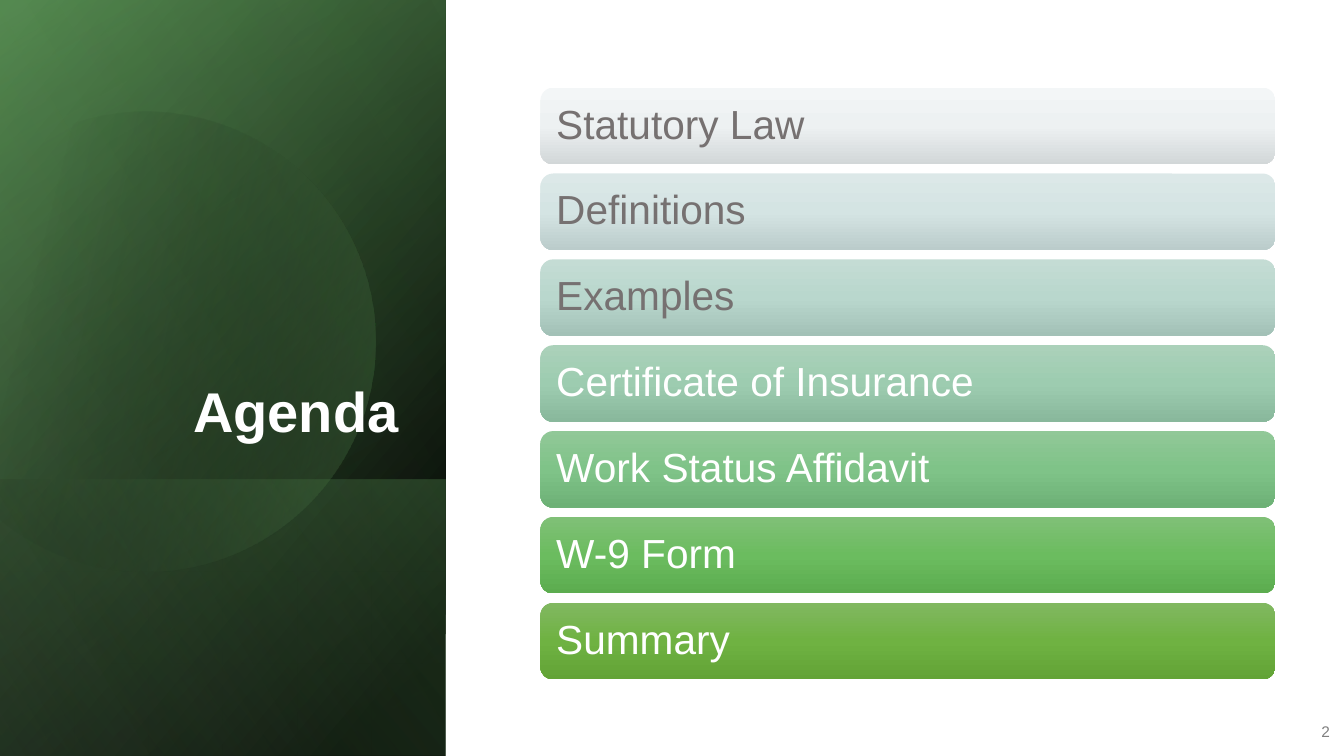
from dataclasses import dataclass
from math import cos, radians, sin

from lxml.etree import SubElement
from pptx import Presentation
from pptx.dml.color import RGBColor
from pptx.enum.shapes import MSO_SHAPE
from pptx.enum.text import MSO_ANCHOR, PP_ALIGN
from pptx.oxml.ns import qn
from pptx.util import Inches, Pt


@dataclass(frozen=True)
class Theme:
    """Colours and type sizes of the slide."""
    font: str = "Arial"
    white: str = "FFFFFF"
    grey: str = "767171"
    number_grey: str = "808080"
    black: str = "000000"
    green: str = "62A25D"
    deep_green: str = "4A7A46"
    pale_green: str = "A1C79E"
    title_size: int = 40
    item_size: int = 29
    number_size: int = 11


THEME = Theme()

AGENDA = [
    ("Statutory Law", THEME.grey, ("F3F6F7", "EDF1F2", "D2D7D8")),
    ("Definitions", THEME.grey, ("DCE8E8", "D4E4E3", "BBCCCB")),
    ("Examples", THEME.grey, ("C4DCD4", "B9D7CD", "A3C1B7")),
    ("Certificate of Insurance", THEME.white, ("ABD1BA", "9DCCB0", "89B89C")),
    ("Work Status Affidavit", THEME.white, ("91C898", "7FC388", "6DB176")),
    ("W-9 Form", THEME.white, ("80C077", "6BBC5F", "5CAC4F")),
    ("Summary", THEME.white, ("81B861", "6FB242", "62A336")),
]


def set_values(target, values):
    """Set each attribute of the target from a dict."""
    for name, value in values.items():
        setattr(target, name, value)


def paint_gradient(shape, stops, angle):
    """Fill a shape with (position, colour, opacity) stops and no outline."""
    shape.shadow.inherit = False
    shape.line.fill.background()
    shape.fill.gradient()
    gradient = shape.element.spPr.find(qn("a:gradFill"))
    stop_list = gradient.find(qn("a:gsLst"))
    for stop in list(stop_list):
        stop_list.remove(stop)
    for position, colour, opacity in stops:
        stop = SubElement(stop_list, qn("a:gs"), pos=str(position * 1000))
        tint = SubElement(stop, qn("a:srgbClr"), val=colour)
        if opacity < 100:
            SubElement(tint, qn("a:alpha"), val=str(opacity * 1000))
    gradient.find(qn("a:lin")).set("ang", str(angle * 60000))


def write_text(shape, text, frame_values, paragraph_values, font_values, colour):
    """Write one formatted paragraph into a shape."""
    frame = shape.text_frame
    set_values(frame, {"word_wrap": True, **frame_values})
    paragraph = frame.paragraphs[0]
    set_values(paragraph, paragraph_values)
    run = paragraph.add_run()
    run.text = text
    set_values(run.font, {"name": THEME.font, **font_values})
    run.font.color.rgb = RGBColor.from_string(colour)


def add_layer(slide, box, stops, angle):
    """Add a mirrored rectangle, turned a quarter, that covers the box."""
    left, top, width, height = box
    shift = (width - height) / 2
    layer = slide.shapes.add_shape(
        MSO_SHAPE.RECTANGLE, Inches(left + shift), Inches(top - shift),
        Inches(height), Inches(width))
    layer.rotation = 90
    layer.element.spPr.find(qn("a:xfrm")).set("flipH", "1")
    paint_gradient(layer, stops, angle)


def add_disc(slide, centre, radius, tilt, half_sweep):
    """Add a tilted disc whose left side is cut off by a vertical chord."""
    steps = 120
    angles = [radians(tilt - half_sweep + 2 * half_sweep * step / steps)
              for step in range(steps + 1)]
    points = [(Inches(centre[0] + radius * cos(angle)),
               Inches(centre[1] + radius * sin(angle))) for angle in angles]
    builder = slide.shapes.build_freeform(*points[0], scale=1.0)
    builder.add_line_segments(points[1:], close=True)
    disc = builder.convert_to_shape()
    disc.rotation = 360 - tilt
    paint_gradient(disc, [(29, THEME.black, 0), (100, THEME.green, 43)], 30)


def add_title_panel(slide, box):
    """Build the layered green panel with the title."""
    left, top, width, height = box
    foot_height = 2.74
    foot = (left, top + height - foot_height, width, foot_height)
    add_layer(slide, box, [(8, THEME.black, 100), (100, THEME.deep_green, 100)], 50)
    add_layer(slide, box, [(0, THEME.black, 0), (99, THEME.green, 46)], 30)
    add_layer(slide, foot, [(2, THEME.green, 29), (100, THEME.black, 30)], 130)
    add_disc(slide, (left + 1.44, top + 3.35), 2.28, 16.1, 134.1)
    add_layer(slide, box, [(0, THEME.black, 0), (99, THEME.pale_green, 11)], 120)
    title = slide.shapes.add_textbox(
        Inches(left + 0.64), Inches(top + 1.84), Inches(3.41), Inches(2.62))
    write_text(title, "Agenda", {"vertical_anchor": MSO_ANCHOR.BOTTOM},
               {"alignment": PP_ALIGN.RIGHT, "line_spacing": 0.9},
               {"size": Pt(THEME.title_size), "bold": True}, THEME.white)


def add_agenda(slide, box):
    """Stack the agenda bars evenly in the box."""
    left, top, width, height = box
    bar_height = 0.76
    pitch = (height - bar_height) / (len(AGENDA) - 1)
    margins = ("margin_left", "margin_top", "margin_right", "margin_bottom")
    frame_values = {"vertical_anchor": MSO_ANCHOR.MIDDLE,
                    **dict.fromkeys(margins, Inches(0.12))}
    for index, (label, colour, shades) in enumerate(AGENDA):
        bar = slide.shapes.add_shape(
            MSO_SHAPE.ROUNDED_RECTANGLE, Inches(left),
            Inches(top + index * pitch), Inches(width), Inches(bar_height))
        stops = [(position, shade, 100)
                 for position, shade in zip((0, 50, 100), shades)]
        paint_gradient(bar, stops, 90)
        write_text(bar, label, frame_values,
                   {"alignment": PP_ALIGN.LEFT, "line_spacing": 0.9},
                   {"size": Pt(THEME.item_size)}, colour)


def add_slide_number(slide, box):
    """Write the slide number in the box."""
    number = slide.shapes.add_textbox(*map(Inches, box))
    write_text(number, "2", {"vertical_anchor": MSO_ANCHOR.MIDDLE},
               {"alignment": PP_ALIGN.RIGHT, "space_after": Pt(6)},
               {"size": Pt(THEME.number_size)}, THEME.number_grey)


def main():
    """Build and save the agenda slide."""
    presentation = Presentation()
    set_values(presentation, {"slide_width": Inches(13.33),
                              "slide_height": Inches(7.5)})
    slide = presentation.slides.add_slide(presentation.slide_layouts[6])
    add_title_panel(slide, (0, 0, 4.42, 7.5))
    add_agenda(slide, (5.36, 0.87, 7.29, 5.87))
    add_slide_number(slide, (12.8, 7.06, 0.49, 0.4))
    presentation.save("out.pptx")


if __name__ == "__main__":
    main()
